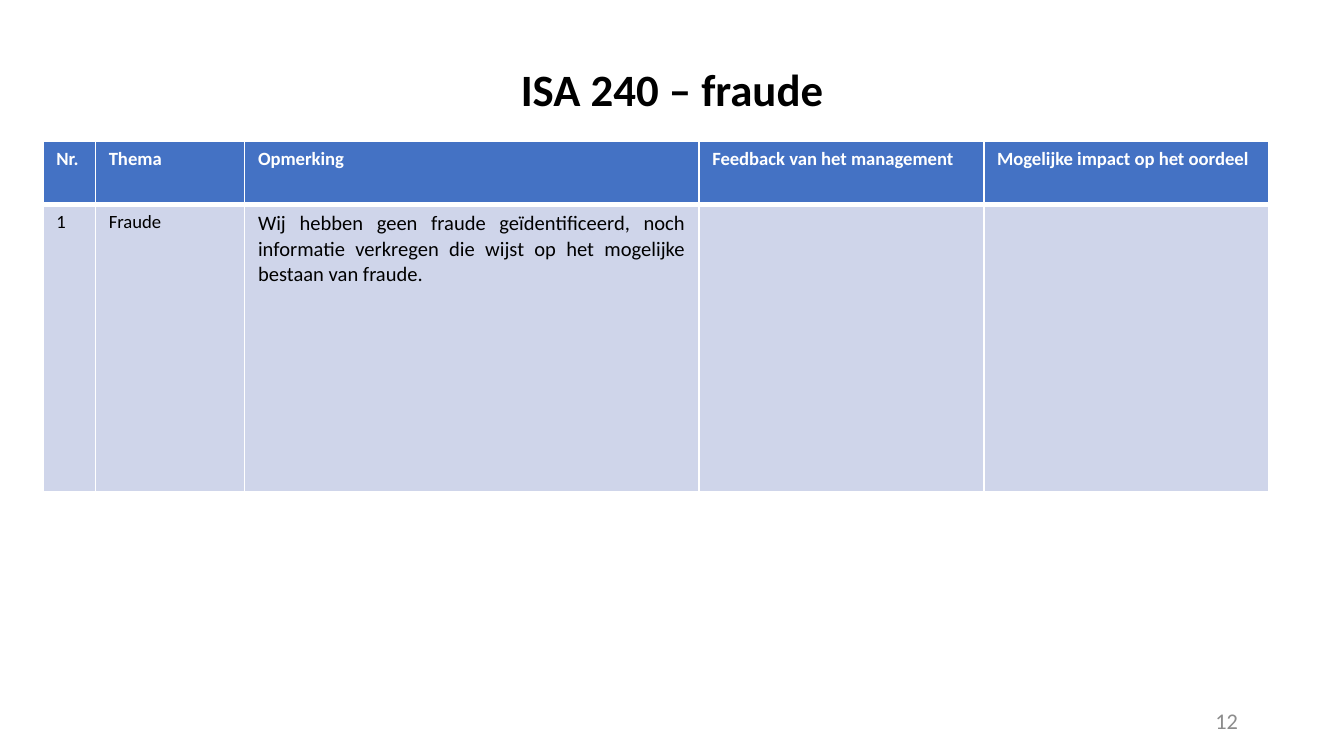
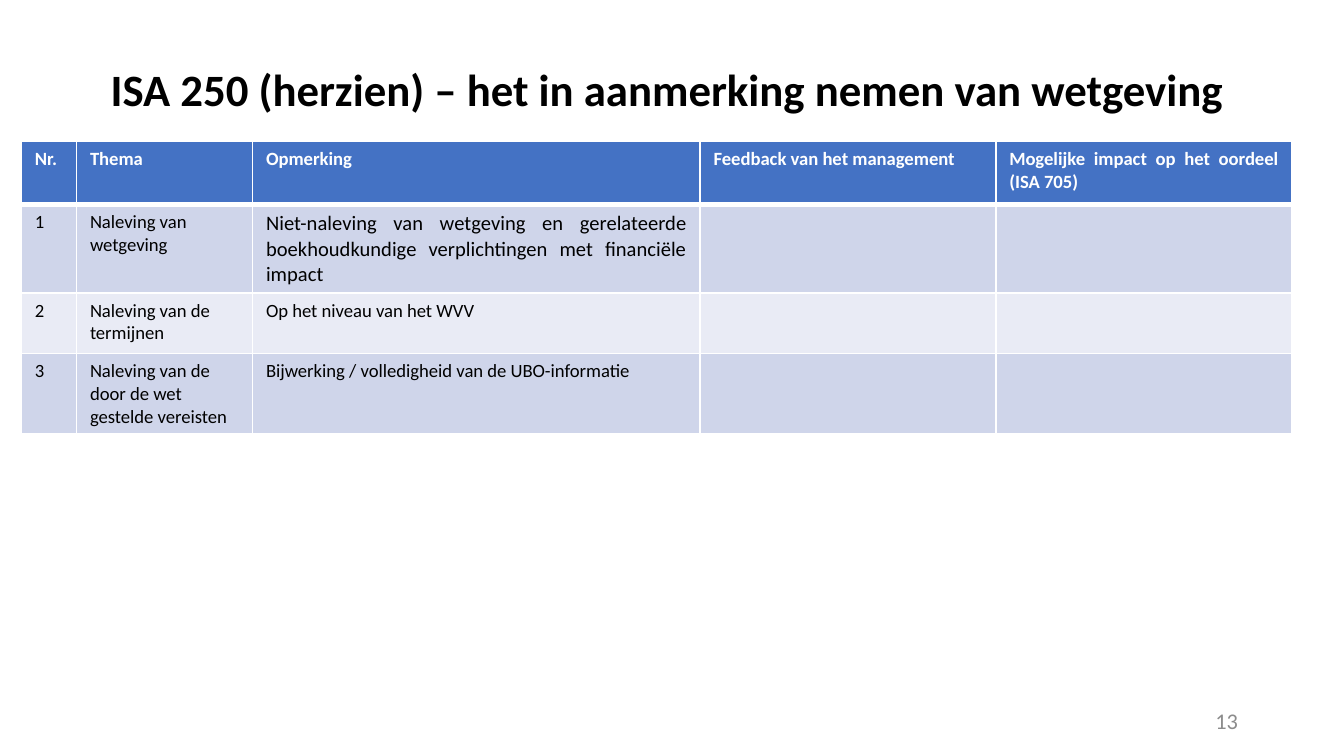
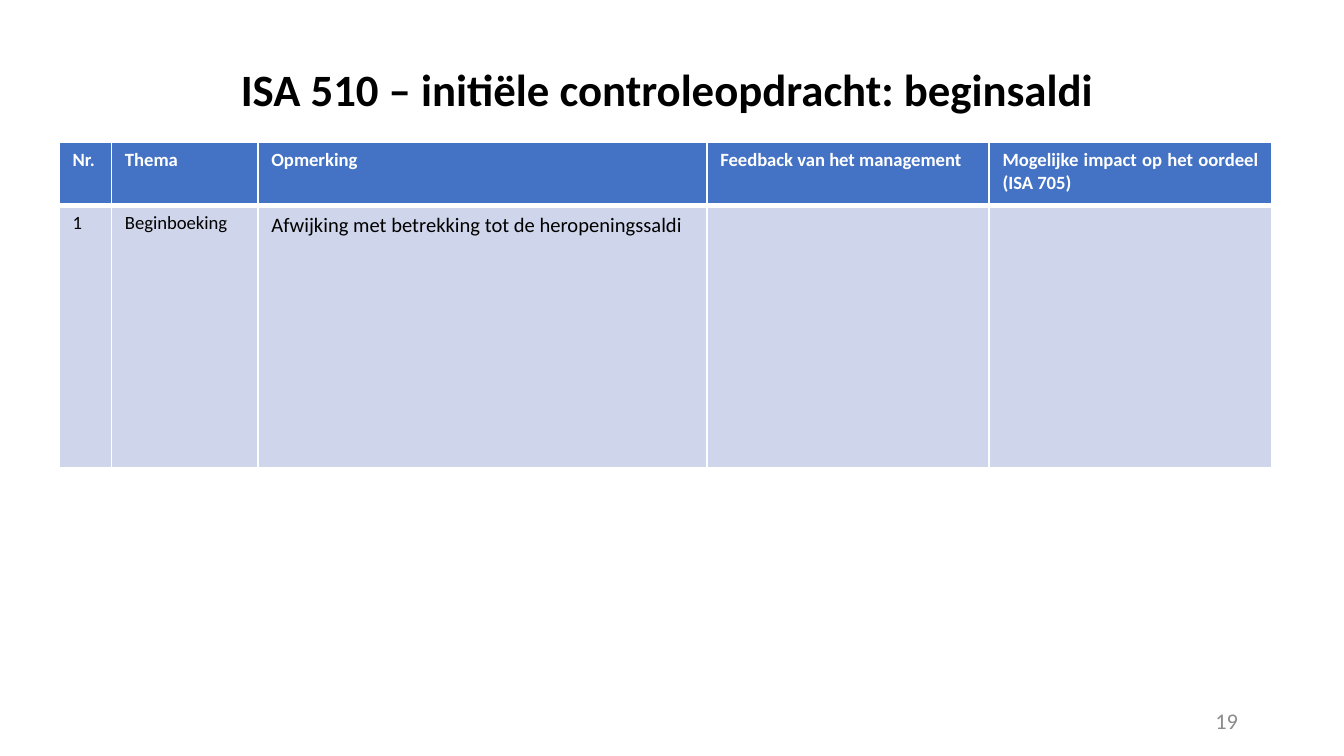
import pptx
import pptx.util
import pptx.dml.color
import pptx.enum.text
import pptx.oxml
from lxml import etree

Inches = pptx.util.Inches
Pt = pptx.util.Pt
ALIGN = pptx.enum.text.PP_ALIGN
MIDDLE = pptx.enum.text.MSO_ANCHOR.MIDDLE

FONT = "Calibri"
COLORS = {
    "white": "FFFFFF",
    "black": "000000",
    "gray": "8C8C8C",
    "head": "4472C4",
    "odd": "CFD5EA",
    "even": "E9EBF5",
}
SIDES = {"l": ALIGN.LEFT, "j": ALIGN.JUSTIFY, "c": ALIGN.CENTER, "r": ALIGN.RIGHT}
HEADS = ["Nr.", "Thema", "Opmerking", "Feedback van het management"]
IMPACT = "Mogelijke impact op het oordeel"

# Alignment strings hold one letter per column.
SLIDES = [
    {
        "title": "ISA 240 – fraude",
        "page": 12,
        "spot": (0.32, 1.05),
        "cols": [0.39, 1.11, 3.38, 2.12, 2.12],
        "rows": [0.47, 2.14],
        "aligns": ("lllll", "jjjll"),
        "impact": IMPACT,
        "body": [
            ("1", "Fraude ", "Wij hebben geen fraude geïdentificeerd, noch informatie "
             "verkregen die wijst op het mogelijke bestaan van fraude."),
        ],
    },
    {
        "title": "ISA 250 (herzien) – het in aanmerking nemen van wetgeving ",
        "page": 13,
        "spot": (0.16, 1.05),
        "cols": [0.41, 1.31, 3.33, 2.2, 2.2],
        "rows": [0.47, 0.66, 0.45, 0.6],
        "aligns": ("llljj", "lljll"),
        "impact": IMPACT + " (ISA 705)",
        "body": [
            ("1", "Naleving van wetgeving", "Niet-naleving van wetgeving en gerelateerde "
             "boekhoudkundige verplichtingen met financiële impact"),
            ("2", "Naleving van de termijnen", "Op het niveau van het WVV"),
            ("3", "Naleving van de door de wet gestelde vereisten",
             "Bijwerking / volledigheid van de UBO-informatie"),
        ],
    },
    {
        "title": "ISA 510 – initiële controleopdracht: beginsaldi ",
        "page": 19,
        "spot": (0.44, 1.06),
        "cols": [0.39, 1.09, 3.34, 2.1, 2.1],
        "rows": [0.47, 1.95],
        "aligns": ("ljjjj", "ljjll"),
        "impact": IMPACT + " (ISA 705)",
        "body": [
            ("1", "Beginboeking", "Afwijking met betrekking tot de heropeningssaldi "),
        ],
    },
]


def rgb(name):
    return pptx.dml.color.RGBColor.from_string(COLORS[name])


def write(frame, text, size, color, side, bold=False):
    frame.text = text
    para = frame.paragraphs[0]
    para.alignment = SIDES[side]
    for run in para.runs:
        run.font.name = FONT
        run.font.size = Pt(size)
        run.font.bold = bold
        run.font.color.rgb = rgb(color)


def place(shape, left, top, width, height):
    shape.left, shape.top = Inches(left), Inches(top)
    shape.width, shape.height = Inches(width), Inches(height)


def add_title(slide, text):
    title = slide.shapes.title
    place(title, 0.69, 0.14, 8.62, 1.09)
    frame = title.text_frame
    write(frame, text, 24, "black", "c", bold=True)
    frame.vertical_anchor = MIDDLE
    frame.paragraphs[0].line_spacing = 0.9


def add_page(slide, page):
    box = slide.shapes.add_textbox(Inches(7.06), Inches(5.21), Inches(2.25), Inches(0.3))
    frame = box.text_frame
    frame.word_wrap = True
    frame.vertical_anchor = MIDDLE
    write(frame, str(page), 12, "gray", "r")


def edge(cell, **widths):
    """Draw white borders; widths maps L, R, T and B to points."""
    props = cell._tc.get_or_add_tcPr()
    for side, width in widths.items():
        line = etree.SubElement(props, pptx.oxml.ns.qn("a:ln" + side), w=str(Pt(width)))
        fill = etree.SubElement(line, pptx.oxml.ns.qn("a:solidFill"))
        etree.SubElement(fill, pptx.oxml.ns.qn("a:srgbClr"), val=COLORS["white"])


def paint(cell, name):
    cell.fill.solid()
    cell.fill.fore_color.rgb = rgb(name)


def add_grid(slide, data):
    cols, rows = data["cols"], data["rows"]
    left, top = data["spot"]
    table = slide.shapes.add_table(
        len(rows), len(cols), Inches(left), Inches(top),
        Inches(sum(cols)), Inches(sum(rows))).table
    for col, width in zip(table.columns, cols):
        col.width = Inches(width)
    for row, height in zip(table.rows, rows):
        row.height = Inches(height)

    lines = [HEADS + [data["impact"]]] + [[*line, "", ""] for line in data["body"]]
    for r, line in enumerate(lines):
        head = r == 0
        fill = "head" if head else ("odd" if r % 2 else "even")
        for c, text in enumerate(line):
            cell = table.cell(r, c)
            edge(cell, L=1, R=1, T=3 if r == 1 else 1, B=3 if head else 1)
            paint(cell, fill)
            if text:
                size = 11 if (r, c) == (1, 2) else 10
                side = data["aligns"][0 if head else 1][c]
                write(cell.text_frame, text, size, "white" if head else "black", side, head)


def main():
    deck = pptx.Presentation()
    deck.slide_width = Inches(10)
    deck.slide_height = deck.slide_width * 9 // 16
    for data in SLIDES:
        slide = deck.slides.add_slide(deck.slide_layouts[5])
        add_page(slide, data["page"])
        add_grid(slide, data)
        add_title(slide, data["title"])
    deck.save("out.pptx")


if __name__ == "__main__":
    main()
